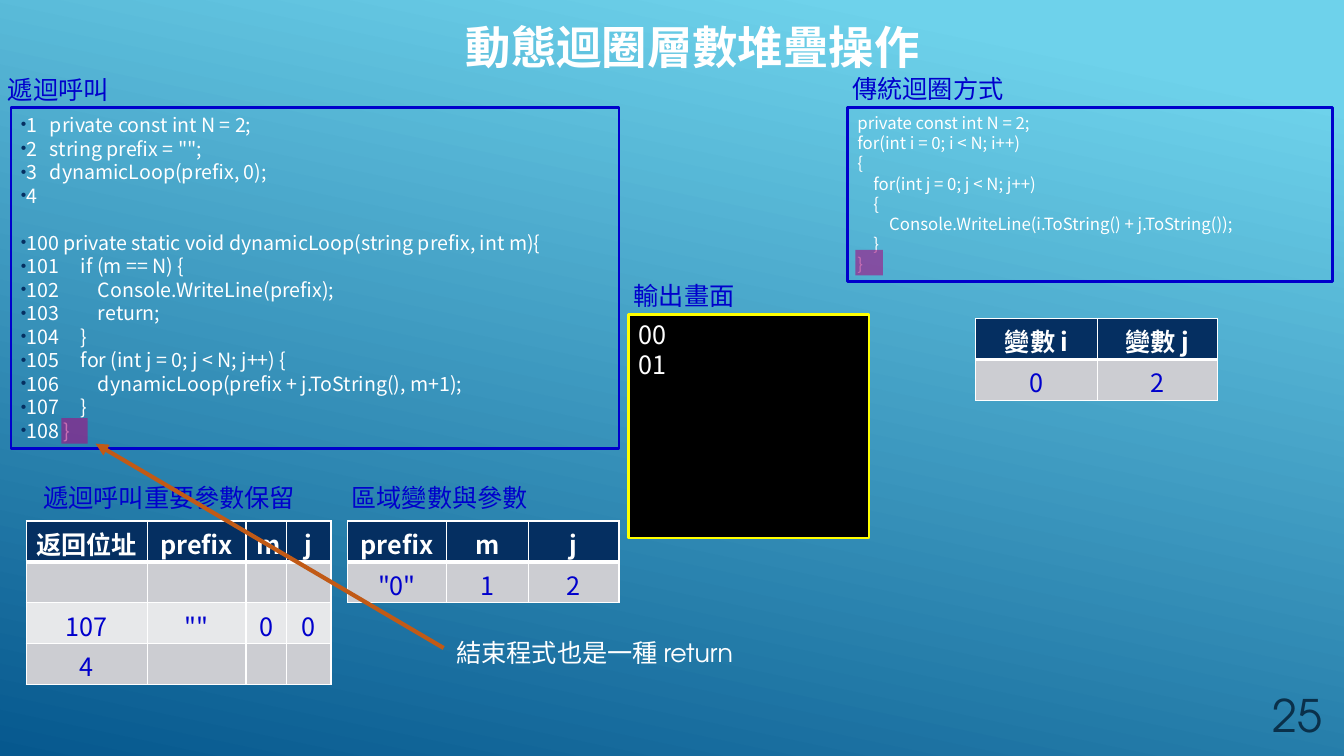
"""Build the slide on recursion with a call stack and nested loops."""
import pptx
import pptx.dml.color
import pptx.enum.dml
import pptx.enum.shapes
import pptx.enum.text
import pptx.oxml
import pptx.oxml.ns
import pptx.util

Cm, Pt = pptx.util.Cm, pptx.util.Pt
RGBColor = pptx.dml.color.RGBColor
Align = pptx.enum.text.PP_ALIGN
Anchor = pptx.enum.text.MSO_ANCHOR
qn = pptx.oxml.ns.qn

SANS, ROUND = "Noto Sans CJK SC", "TeX Gyre Adventor"
WHITE, BLACK = RGBColor(255, 255, 255), RGBColor(0, 0, 0)
BLUE, YELLOW = RGBColor(0, 0, 0xCC), RGBColor(255, 255, 0)
NAVY, INK = RGBColor(0x05, 0x2F, 0x61), RGBColor(0x0A, 0x30, 0x4A)
SKY, DEEP = RGBColor(0x6E, 0xD2, 0xEB), RGBColor(0x06, 0x58, 0x8E)
PURPLE, ORANGE = RGBColor(0xA5, 0x0E, 0x82), RGBColor(0xC1, 0x5A, 0x16)
BANDS = (RGBColor(0xCC, 0xCD, 0xD2), RGBColor(0xE7, 0xE8, 0xEA))

TITLE = "動態迴圈層數堆疊操作"
PAGE_NUMBER = "25"
NOTE = "結束程式也是一種 return"
LABELS = [
    ("輸出畫面", (15.72, 6.93, 4.01, 0.97)),
    ("遞迴呼叫", (-0.05, 1.75, 3.2, 0.97)),
    ("傳統迴圈方式", (21.23, 1.73, 4.52, 0.97)),
    ("遞迴呼叫重要參數保留", (0.84, 12.04, 7.34, 1.19)),
    ("區域變數與參數", (8.61, 12.04, 7.34, 1.19)),
]
RECURSION = [
    ("1\tprivate const int N = 2;", 0.73),
    ("2\tstring prefix = \"\";", 0.73),
    ("3\tdynamicLoop(prefix, 0);", 0.73),
    ("4", 0),
    ("100 private static void dynamicLoop(string prefix, int m){", 0),
    ("101\tif (m == N) {", 1.51),
    ("102\tConsole.WriteLine(prefix);", 1.94),
    ("103\treturn;", 1.94),
    ("104\t}", 1.51),
    ("105\tfor (int j = 0; j < N; j++) {", 1.51),
    ("106\tdynamicLoop(prefix + j.ToString(), m+1);", 1.94),
    ("107\t}", 1.51),
    ("108 }", 0),
]
LOOPS = [
    ("private const int N = 2;", 0),
    ("for(int i = 0; i < N; i++)", 0),
    ("{", 0),
    ("for(int j = 0; j < N; j++)", 1),
    ("{", 1),
    ("Console.WriteLine(i.ToString() + j.ToString());", 2),
    ("}", 1),
    ("}", 0),
]
OUTPUT = ["00", "01"]
TABLES = [
    ((24.59, 8.03), (3.07, 3.02), [["變數 i", "變數 j"], ["0", "2"]]),
    ((0.66, 13.13), (3.05, 2.49, 1.02, 1.12),
     [["返回位址", "prefix", "m", "j"], ["", "", "", ""],
      ["107", "\"\"", "0", "0"], ["4", "", "", ""]]),
    ((8.76, 13.13), (2.49, 2.06, 2.29),
     [["prefix", "m", "j"], ["\"0\"", "1", "2"]]),
]
HIGHLIGHTS = [(1.55, 10.54, 0.66, 0.64), (21.56, 6.3, 0.69, 0.64)]
ARROW = (11.18, 16.33, 2.41, 11.18)
ROW_HEIGHT, LOOP_INDENT, LINE_FACTOR = 1.03, 0.4, 1.2


def assign(target, **values):
    for name, value in values.items():
        setattr(target, name, value)


def append(parent, tag, **attributes):
    child = parent.makeelement(qn(tag), attributes)
    parent.append(child)
    return child


def write(para, text, size, color, font=SANS, bold=False, spacing=None, **layout):
    span = para.add_run()
    span.text = text
    assign(span.font, size=Pt(size), name=font, bold=bold)
    span.font.color.rgb = color
    append(span.font._element, "a:ea", typeface=SANS)
    assign(para, line_spacing=spacing or Pt(size * LINE_FACTOR), **layout)


def fill_lines(box, lines, size, color, **style):
    frame = box.text_frame
    for index, line in enumerate(lines):
        para = frame.add_paragraph() if index else frame.paragraphs[0]
        write(para, line, size, color, **style)
    return frame.paragraphs


def add_text(page, place, text, size, color, anchor=Anchor.TOP, wrap=True, **style):
    box = page.shapes.add_textbox(*map(Cm, place))
    assign(box.text_frame, word_wrap=wrap, vertical_anchor=anchor)
    fill_lines(box, [text], size, color, **style)


def add_panel(page, place, fill=None, line=None):
    panel = page.shapes.add_shape(
        pptx.enum.shapes.MSO_SHAPE.RECTANGLE, *map(Cm, place))
    panel.shadow.inherit = False
    for paint, color in ((panel.fill, fill), (panel.line.fill, line)):
        if color is None:
            paint.background()
        else:
            paint.solid()
            paint.fore_color.rgb = color
    if line is not None:
        panel.line.width = Pt(2)
    assign(panel.text_frame, vertical_anchor=Anchor.TOP, word_wrap=True)
    return panel


def add_recursion(page):
    panel = add_panel(page, (0.28, 2.72, 15.32, 8.59), line=BLUE)
    paras = fill_lines(panel, [text for text, stop in RECURSION], 14, WHITE,
                       alignment=Align.LEFT)
    for para, (text, stop) in zip(paras, RECURSION):
        if text.startswith("100"):
            para.space_before = Pt(14 * LINE_FACTOR)
        layout = para._p.get_or_add_pPr()
        append(append(layout, "a:buClr"), "a:srgbClr", val=str(NAVY))
        append(layout, "a:buSzPct", val="80000")
        append(layout, "a:buFont", typeface="Arial")
        append(layout, "a:buChar", char="•")
        if stop:
            append(append(layout, "a:tabLst"), "a:tab", pos=str(Cm(stop)), algn="l")


def add_loops(page):
    panel = add_panel(page, (21.36, 2.72, 12.22, 4.37), line=BLUE)
    paras = fill_lines(panel, [text for text, depth in LOOPS], 12, WHITE,
                       alignment=Align.LEFT)
    for para, (text, depth) in zip(paras, LOOPS):
        para._p.get_or_add_pPr().set("marL", str(Cm(depth * LOOP_INDENT)))


def add_grid(page, corner, widths, rows):
    size = (sum(widths), ROW_HEIGHT * len(rows))
    table = page.shapes.add_table(
        len(rows), len(widths), *map(Cm, corner + size)).table
    for column, width in zip(table.columns, widths):
        column.width = Cm(width)
    for row, texts in enumerate(rows):
        table.rows[row].height = Cm(ROW_HEIGHT)
        for column, text in enumerate(texts):
            cell = table.cell(row, column)
            assign(cell, margin_top=Cm(0.1), margin_bottom=0)
            header = row == 0
            if text:
                write(cell.text_frame.paragraphs[0], text, 18,
                      WHITE if header else BLUE, bold=header, spacing=1.0,
                      alignment=Align.CENTER)
            format_cell = cell._tc.get_or_add_tcPr()
            for side in "LRTB":
                width = Pt(3 if header and side == "B" else 1)
                border = append(format_cell, "a:ln" + side, w=str(width))
                append(append(border, "a:solidFill"), "a:srgbClr", val=str(WHITE))
            cell.fill.solid()
            cell.fill.fore_color.rgb = NAVY if header else BANDS[(row - 1) % 2]


def add_arrow(page):
    arrow = page.shapes.add_connector(
        pptx.enum.shapes.MSO_CONNECTOR.STRAIGHT, *map(Cm, ARROW))
    arrow.line.width = Pt(3)
    arrow.line.color.rgb = ORANGE
    append(arrow.line._get_or_add_ln(), "a:tailEnd", type="triangle")
    append(arrow._element.spPr, "a:effectLst")


def main():
    deck = pptx.Presentation()
    assign(deck, slide_width=Cm(33.87), slide_height=Cm(19.05))
    page = deck.slides.add_slide(deck.slide_layouts[6])
    backdrop = page.background.fill
    backdrop.gradient()
    backdrop.gradient_angle = 258
    for stop, position, color in zip(backdrop.gradient_stops, (0.1, 1), (SKY, DEEP)):
        stop.position = position
        stop.color.rgb = color

    add_text(page, (30.4, 16.97, 3.18, 1.85), PAGE_NUMBER, 32, INK, font=ROUND,
             anchor=Anchor.BOTTOM, spacing=1.0, alignment=Align.RIGHT)
    add_recursion(page)
    for text, place in LABELS:
        add_text(page, place, text, 18, BLUE)
    screen = add_panel(page, (15.85, 7.92, 6.05, 5.64), BLACK, YELLOW)
    fill_lines(screen, OUTPUT, 18, WHITE, alignment=Align.LEFT)
    add_loops(page)
    add_text(page, (11.18, 0.36, 12.55, 1.63), TITLE, 32.4, WHITE, font=ROUND,
             bold=True, anchor=Anchor.BOTTOM, spacing=0.85, alignment=Align.CENTER)
    for place in HIGHLIGHTS:
        marker = add_panel(page, place, PURPLE)
        tint = marker._element.spPr.find(qn("a:solidFill"))[0]
        append(tint, "a:alpha", val="60000")
    for corner, widths, rows in TABLES:
        add_grid(page, corner, widths, rows)
    add_arrow(page)
    add_text(page, (11.25, 15.93, 7.62, 1.02), NOTE, 18, WHITE, font=ROUND, wrap=False)
    deck.save("out.pptx")


if __name__ == "__main__":
    main()
